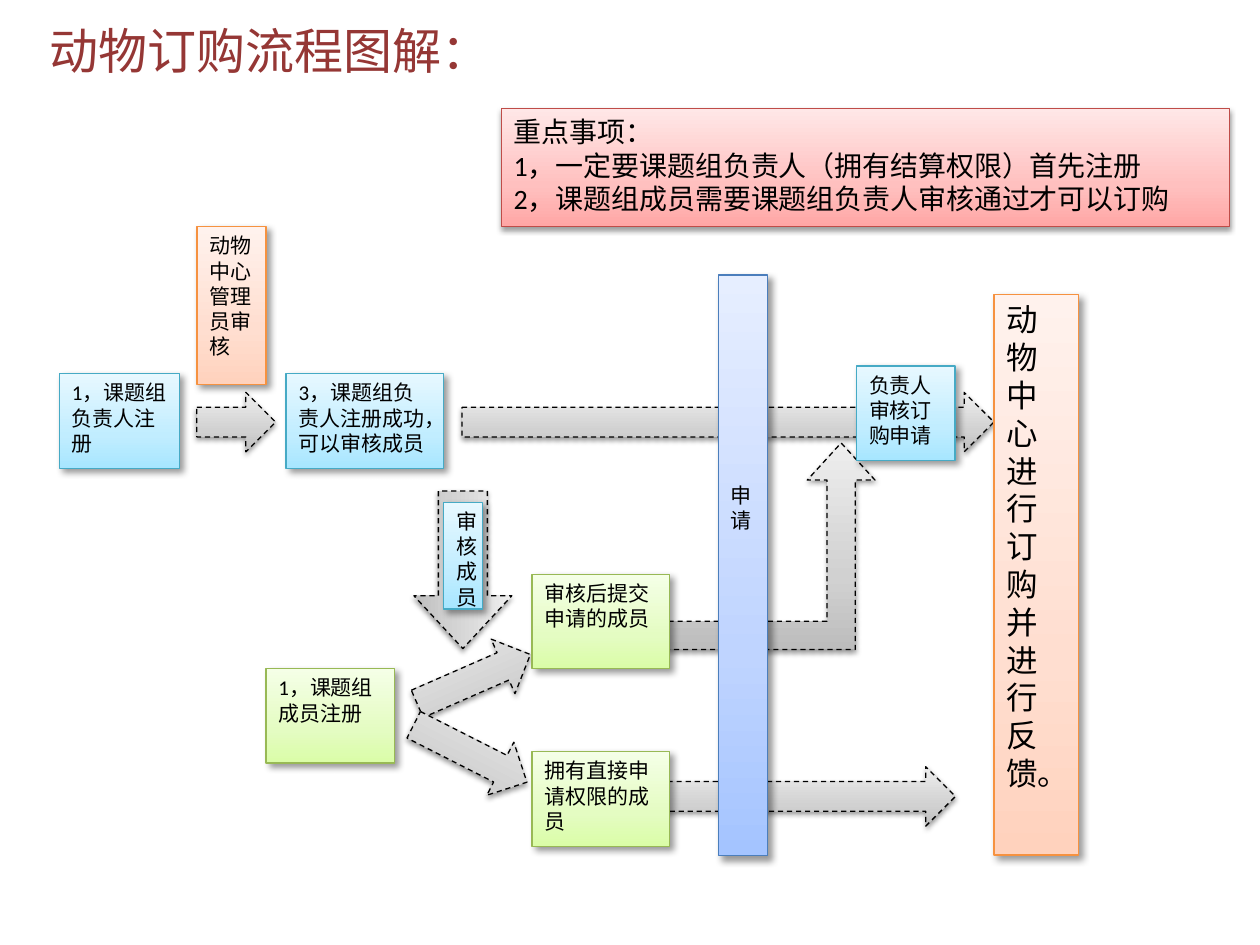
from copy import deepcopy
from dataclasses import dataclass

from lxml import etree
from pptx import Presentation
from pptx.dml.color import RGBColor
from pptx.enum import dml, shapes, text
from pptx.oxml import ns
from pptx.util import Pt

RECT = shapes.MSO_SHAPE.RECTANGLE
RIGHT = shapes.MSO_SHAPE.RIGHT_ARROW
BENT_UP = shapes.MSO_SHAPE.BENT_UP_ARROW


@dataclass(frozen=True)
class Palette:
    stops: tuple  # from the bottom edge to the top edge
    line: str


@dataclass(frozen=True)
class Shadow:
    alpha: int
    blur: float
    dist: float
    angle: int


class Theme:
    font = "Calibri"
    ink = "000000"
    title_ink = "953735"
    title_size, feedback_size, key_size, step_size = 28, 18, 16, 12
    line_width = 0.75
    stop_positions = (0, 0.35, 1)
    gray = Palette(("BDBDBD", "D1D1D1", "EEEEEE"), "000000")
    cyan = Palette(("A7E6FF", "C1EDFF", "E7F8FF"), "46AAC5")
    green = Palette(("DAFDA7", "E4FCC2", "F5FFE7"), "98B955")
    orange = Palette(("FFD2BD", "FFDED0", "FFF2ED"), "F69240")
    blue = Palette(("A4C4FF", "BFD4FF", "E6EEFF"), "4B7EBC")
    red = Palette(("FFA6A5", "FFC0BF", "FFE7E7"), "BF4C48")
    soft_shadow = Shadow(38, 3.1, 1.6, 90)
    corner_shadow = Shadow(40, 4, 3, 45)


def add_panel(slide, kind, box, palette, shadow):
    """Add a preset shape with a three-stop gradient, a thin line and a shadow."""
    panel = slide.shapes.add_shape(kind, *map(Pt, box))
    panel.fill.gradient()
    panel.fill.gradient_angle = 90
    stop_list = panel.element.spPr.find(".//" + ns.qn("a:gsLst"))
    stop_list.insert(1, deepcopy(stop_list[0]))
    stops = zip(panel.fill.gradient_stops, Theme.stop_positions, palette.stops)
    for stop, position, color in stops:
        stop.position = position
        stop.color.rgb = RGBColor.from_string(color)
    panel.line.color.rgb = RGBColor.from_string(palette.line)
    panel.line.width = Pt(Theme.line_width)

    panel.shadow.inherit = False
    effects = panel.element.spPr.find(ns.qn("a:effectLst"))
    outer = etree.SubElement(
        effects, ns.qn("a:outerShdw"), blurRad=str(Pt(shadow.blur)),
        dist=str(Pt(shadow.dist)), dir=str(shadow.angle * 60000), rotWithShape="0")
    color = etree.SubElement(outer, ns.qn("a:srgbClr"), val=Theme.ink)
    etree.SubElement(color, ns.qn("a:alpha"), val=str(shadow.alpha * 1000))
    return panel


def write(frame, lines, size, color=Theme.ink):
    frame.word_wrap = True
    frame.vertical_anchor = text.MSO_ANCHOR.TOP
    for i, line in enumerate(lines):
        paragraph = frame.add_paragraph() if i else frame.paragraphs[0]
        paragraph.alignment = text.PP_ALIGN.LEFT
        run = paragraph.add_run()
        run.text = line
        run.font.name = Theme.font
        run.font.size = Pt(size)
        run.font.color.rgb = RGBColor.from_string(color)


def add_title(slide, box):
    frame = slide.shapes.add_textbox(*map(Pt, box)).text_frame
    frame.margin_left, frame.margin_top = Pt(17), 0
    write(frame, ["动物订购流程图解："], Theme.title_size, Theme.title_ink)


def add_key_points(slide, box):
    key_points = add_panel(slide, RECT, box, Theme.red, Theme.soft_shadow)
    write(key_points.text_frame, [
        "重点事项：",
        "1，一定要课题组负责人（拥有结算权限）首先注册",
        "2，课题组成员需要课题组负责人审核通过才可以订购",
    ], Theme.key_size)


def add_arrows(slide, box):
    left, top = box[:2]
    thick = 34
    leader_row = 94.6
    arrows = [  # kind, x, y, width, height, rotation, adjustments
        (BENT_UP, 348, 123.5, 118, 118, 0, (0.136, 0.164, 0.18)),
        (RIGHT, 332, 308.5, 180, thick, 0, ()),
        (RIGHT, 230, leader_row, 304, thick, 0, ()),
        (RIGHT, 185.5, 168, 90, 56, 90, (0.5, 0.539)),
        (RIGHT, 78.5, leader_row, 45, thick, 0, ()),
        (RIGHT, 201.5, 241.5, 70.5, thick, 336.4, ()),
        (RIGHT, 198.5, 284, 72.5, thick, 26.9, ()),
    ]
    for kind, x, y, width, height, rotation, adjustments in arrows:
        arrow = add_panel(slide, kind, (left + x, top + y, width, height),
                          Theme.gray, Theme.soft_shadow)
        arrow.line.dash_style = dml.MSO_LINE.DASH
        arrow.rotation = rotation
        for i, value in enumerate(adjustments):
            arrow.adjustments[i] = value


def add_steps(slide, box):
    left, top = box[:2]
    tall = 54
    leader_row = 84
    branch_column, branch_width = 270, 78.5
    small = Theme.step_size
    inset = 3.6
    steps = [  # wording, x, y, width, height, palette, size, top inset
        ("1，课题组负责人注册", 0, leader_row, 68.5, tall, Theme.cyan, small, inset),
        ("1，课题组成员注册", 118, 252.5, 73.5, tall, Theme.green, small, inset),
        ("3，课题组负责人注册成功，可以审核成员",
         129.5, leader_row, 90, tall, Theme.cyan, small, inset),
        ("审核成员", 219.5, 157.5, 22.3, 61, Theme.cyan, small, inset),
        ("拥有直接申请权限的成员",
         branch_column, 300, branch_width, tall, Theme.green, small, inset),
        ("审核后提交申请的成员",
         branch_column, 198.5, branch_width, tall, Theme.green, small, inset),
        ("动物中心进行订购并进行反馈。",
         534, 38.5, 48.2, 320.5, Theme.orange, Theme.feedback_size, inset),
        ("申请", 376.5, 27.5, 28, 332, Theme.blue, small, 118.6),
        ("动物中心管理员审核", 78.5, 0, 39.6, 90, Theme.orange, small, inset),
        ("负责人审核订购申请", 455.5, 79.5, 56.2, tall, Theme.cyan, small, inset),
    ]
    for wording, x, y, width, height, palette, size, top_inset in steps:
        step = add_panel(slide, RECT, (left + x, top + y, width, height),
                         palette, Theme.corner_shadow)
        step.text_frame.margin_top = Pt(top_inset)
        write(step.text_frame, [wording], size)


def main():
    deck = Presentation()
    deck.slide_width, deck.slide_height = Pt(720), Pt(540)
    slide = deck.slides.add_slide(deck.slide_layouts[6])

    flow_box = (34, 129.6, 583, 360)
    # Arrows lie behind the steps
    add_arrows(slide, flow_box)
    add_steps(slide, flow_box)
    # Key points and heading
    add_key_points(slide, (286.5, 62, 416, 67.5))
    add_title(slide, (11.5, 12, 272, 90))
    deck.save("out.pptx")


if __name__ == "__main__":
    main()
